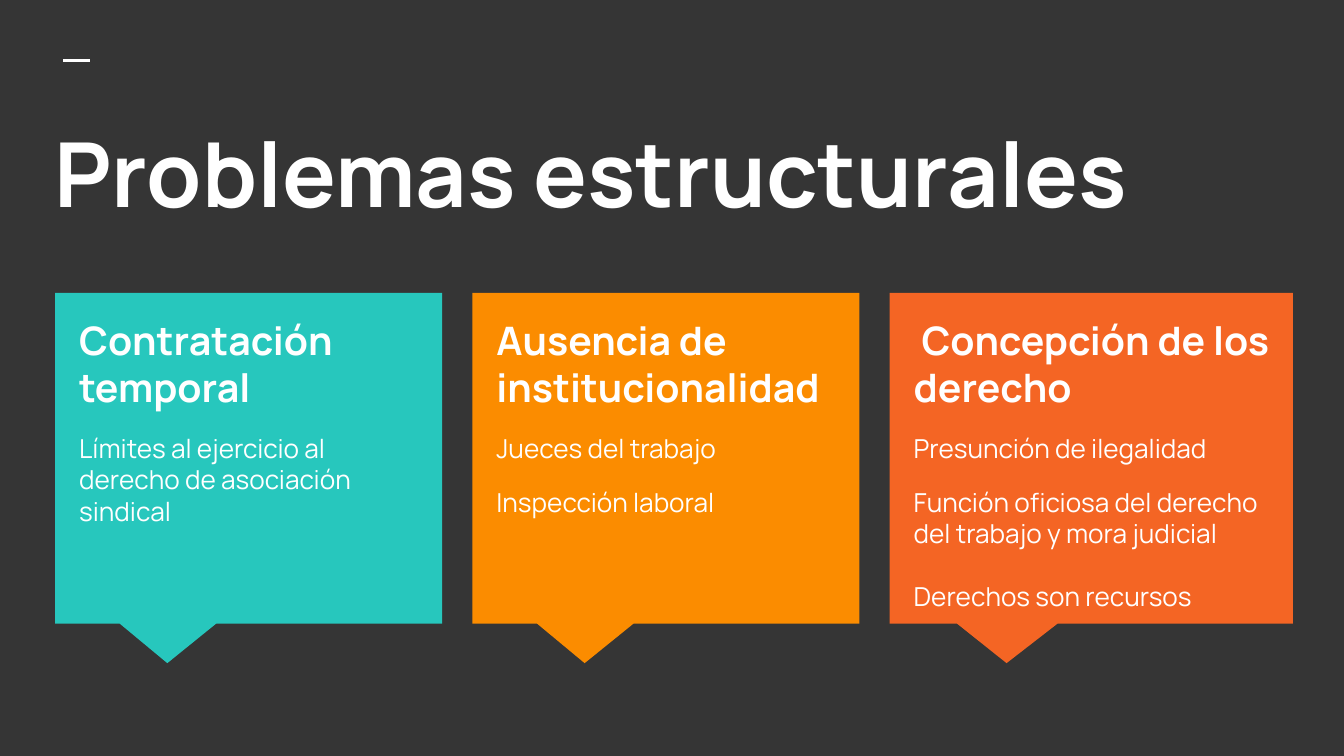
import pptx
import pptx.dml.color
import pptx.enum.shapes
import pptx.enum.text
import pptx.util
from dataclasses import dataclass
from lxml import etree

Inches = pptx.util.Inches
Pt = pptx.util.Pt


@dataclass(frozen=True)
class Theme:
    font: str = "Manrope"
    back: str = "353535"
    ink: str = "FFFFFF"
    teal: str = "27C7BD"
    amber: str = "FB8C00"
    coral: str = "F46524"
    title: int = 48
    head: int = 21
    body: int = 14


THEME = Theme()

# Fill, card width, text width, heading, (space before, text) of each point
CARDS = [
    (THEME.teal, 2.88, 2.71, "Contratación temporal",
     [(12, "Límites al ejercicio al derecho de asociación sindical")]),
    (THEME.amber, 2.88, 2.71, "Ausencia de institucionalidad",
     [(12, "Jueces del trabajo"), (12, "Inspección laboral")]),
    (THEME.coral, 3, 2.88, " Concepción de los derecho",
     [(12, "Presunción de ilegalidad"),
      (12, "Función oficiosa del derecho del trabajo y mora judicial"),
      (16.8, "Derechos son recursos")]),
]
WIDE = 10
LEFT, LAST, TOP, HEIGHT = 0.41, 6.62, 2.18, 2.46
STEP = (LAST - LEFT) / (len(CARDS) - 1)


def color(code):
    return pptx.dml.color.RGBColor.from_string(code)


def add_text(slide, box, lines):
    """Add a text box; each line is (text, size, bold, space before)."""
    frame = slide.shapes.add_textbox(*map(Inches, box)).text_frame
    look = {"word_wrap": True, "vertical_anchor": pptx.enum.text.MSO_ANCHOR.TOP}
    for side in ("left", "right", "top", "bottom"):
        look["margin_" + side] = Inches(0.1)
    for name, value in look.items():
        setattr(frame, name, value)
    for i, (text, size, bold, gap) in enumerate(lines):
        para = frame.add_paragraph() if i else frame.paragraphs[0]
        para.space_before = Pt(gap)
        run = para.add_run()
        run.text = text
        style = {"name": THEME.font, "size": Pt(size), "bold": bold}
        for name, value in style.items():
            setattr(run.font, name, value)
        run.font.color.rgb = color(THEME.ink)


def add_dash(slide):
    ends = map(Inches, (0.47, 0.45, 0.67, 0.45))
    dash = slide.shapes.add_connector(
        pptx.enum.shapes.MSO_CONNECTOR.STRAIGHT, *ends)
    dash.line.color.rgb = color(THEME.ink)
    dash.line.width = Pt(1.5)
    etree.SubElement(dash._element.spPr, pptx.oxml.ns.qn("a:effectLst"))


def add_card(slide, left, fill, width, span, head, points):
    """Add a callout with its heading and points over it."""
    box = map(Inches, (left, TOP, width, HEIGHT))
    card = slide.shapes.add_shape(
        pptx.enum.shapes.MSO_SHAPE.RECTANGULAR_CALLOUT, *box)
    card.adjustments[0] = -0.21
    card.adjustments[1] = 0.62
    card.shadow.inherit = False
    card.fill.solid()
    card.fill.fore_color.rgb = color(fill)
    card.line.fill.background()
    lines = [(head, THEME.head, True, 0)]
    lines += [(text, THEME.body, False, gap) for gap, text in points]
    add_text(slide, (left + 0.08, TOP + 0.07, span, 2.19), lines)


def main():
    deck = pptx.Presentation()
    deck.slide_width = Inches(WIDE)
    deck.slide_height = Inches(WIDE * 9 / 16)
    slide = deck.slides.add_slide(deck.slide_layouts[6])
    slide.background.fill.solid()
    slide.background.fill.fore_color.rgb = color(THEME.back)
    add_dash(slide)
    add_text(slide, (0.31, 0.78, 9.43, 1.12),
             [("Problemas estructurales", THEME.title, True, 0)])
    for i, card in enumerate(CARDS):
        add_card(slide, LEFT + i * STEP, *card)
    deck.save("out.pptx")


if __name__ == "__main__":
    main()
